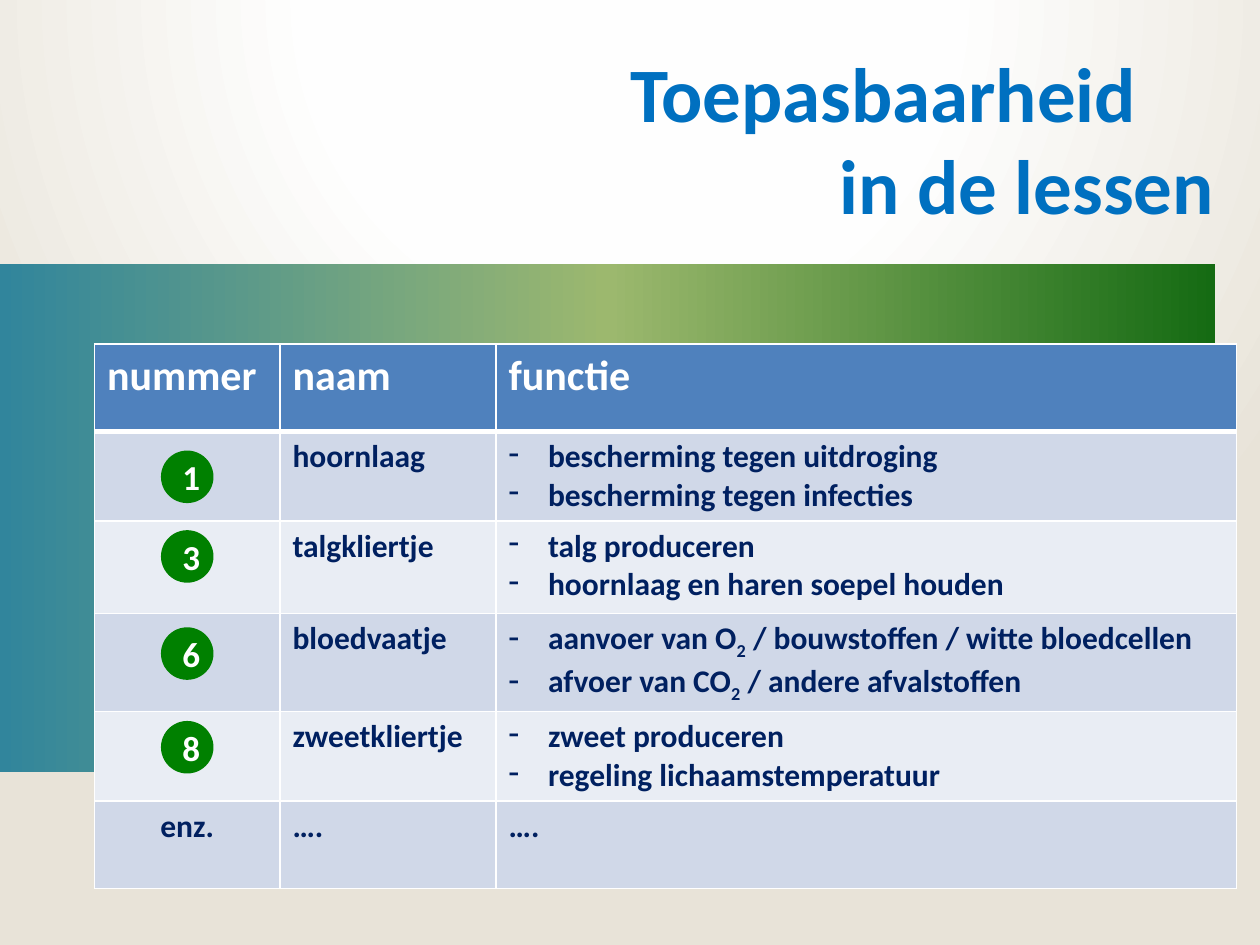
from lxml import etree
from pptx import Presentation
from pptx.dml.color import RGBColor
from pptx.enum import shapes, text
from pptx.oxml import parse_xml
from pptx.oxml.ns import nsdecls, qn
from pptx.util import Pt

WHITE = RGBColor(0xFF, 0xFF, 0xFF)
SKY = RGBColor(0x00, 0x70, 0xC0)
NAVY = RGBColor(0x00, 0x20, 0x60)
GREEN = RGBColor(0x00, 0x80, 0x00)
HEAD = RGBColor(0x4F, 0x81, 0xBD)
BANDS = [RGBColor(0xD0, 0xD8, 0xE8), RGBColor(0xE9, 0xED, 0xF4)]
BACK = [(0, WHITE), (40, RGBColor(0xFE, 0xFE, 0xFE)), (100, RGBColor(0xE8, 0xE3, 0xD8))]
SWEEP = [(0, RGBColor(0x31, 0x85, 0x9C)), (50, RGBColor(0x9C, 0xB8, 0x6E)),
         (100, RGBColor(0x15, 0x6B, 0x13))]
ROUND = ('<a:path path="circle"><a:fillToRect l="50000" t="-80000" '
         'r="50000" b="180000"/></a:path>')
LEVEL = '<a:lin ang="0" scaled="0"/>'

COLS = [106, 123.5, 423]
ROWS = [50, 50, 53, 50, 50, 50]
# "|" switches subscript on and off; a list is set with dashes
DATA = [
    ("nummer", "naam", "functie"),
    ("", "hoornlaag", ["bescherming tegen uitdroging", "bescherming tegen infecties"]),
    ("", "talgkliertje", ["talg produceren", "hoornlaag en haren soepel houden"]),
    ("", "bloedvaatje", ["aanvoer van O|2| / bouwstoffen / witte bloedcellen",
                         "afvoer van CO|2| / andere afvalstoffen"]),
    ("", "zweetkliertje", ["zweet produceren", "regeling lichaamstemperatuur"]),
    ("enz.", "….", "…."),
]
# Number and top of each badge, measured from the top of the table
BADGES = [("1", 62), ("3", 107.5), ("6", 163), ("8", 216.5)]


def blend(fill, stops, shade):
    """Give a fill the colour stops and the shading rule."""
    fill.gradient()
    grad = fill._fill._gradFill
    marks = "".join(f'<a:gs pos="{pos * 1000}"><a:srgbClr val="{tone}"/></a:gs>'
                    for pos, tone in stops)
    new = parse_xml(f'<a:gradFill {nsdecls("a")} rotWithShape="1">'
                    f'<a:gsLst>{marks}</a:gsLst>{shade}</a:gradFill>')
    grad.getparent().replace(grad, new)


def style(para, size, tone):
    font = para.font
    font.name, font.size, font.bold = "Calibri", Pt(size), True
    font.color.rgb = tone


def write(para, words, size, tone):
    for i, part in enumerate(words.split("|")):
        run = para.add_run()
        run.text = part
        if i % 2:
            run.font._element.set("baseline", "-25000")
    style(para, size, tone)


def dash(para):
    props = para._p.get_or_add_pPr()
    props.set("marL", str(Pt(22.5)))
    props.set("indent", str(-Pt(22.5)))
    mark = etree.Element(qn("a:buChar"), char="-")
    props.insert(0, mark)


def edge(cell, foot):
    """Draw white cell borders, with the given width at the foot."""
    props = cell._tc.get_or_add_tcPr()
    for i, (side, width) in enumerate([("L", 1), ("R", 1), ("T", 1), ("B", foot)]):
        props.insert(i, parse_xml(
            f'<a:ln{side} {nsdecls("a")} w="{Pt(width)}"><a:solidFill>'
            f'<a:srgbClr val="{WHITE}"/></a:solidFill></a:ln{side}>'))


def banner(slide, x, y, w, h):
    box = slide.shapes.add_shape(shapes.MSO_SHAPE.RECTANGLE, Pt(x), Pt(y), Pt(w), Pt(h))
    box.shadow.inherit = False
    blend(box.fill, SWEEP, LEVEL)
    box.line.fill.background()


def title(slide, x, y, w, h):
    frame = slide.shapes.add_textbox(Pt(x), Pt(y), Pt(w), Pt(h)).text_frame
    frame.word_wrap = True
    frame.margin_left = frame.margin_right = frame.margin_top = frame.margin_bottom = 0
    write(frame.paragraphs[0], "Toepasbaarheid", 44, SKY)
    last = frame.add_paragraph()
    write(last, "in de lessen", 44, SKY)
    last.alignment = text.PP_ALIGN.RIGHT


def badge(slide, x, y, size, label):
    dot = slide.shapes.add_shape(shapes.MSO_SHAPE.OVAL, Pt(x), Pt(y), Pt(size), Pt(size))
    dot.shadow.inherit = False
    dot.fill.solid()
    dot.fill.fore_color.rgb = dot.line.color.rgb = GREEN
    dot.line.width = Pt(2)
    dot.text_frame.vertical_anchor = text.MSO_ANCHOR.MIDDLE
    para = dot.text_frame.paragraphs[0]
    para.alignment = text.PP_ALIGN.CENTER
    write(para, label, 20, WHITE)


def grid(slide, x, y):
    """Place the table and the numbered badges of its first column."""
    table = slide.shapes.add_table(len(ROWS), len(COLS), Pt(x), Pt(y),
                                   Pt(sum(COLS)), Pt(sum(ROWS))).table
    for col, width in zip(table.columns, COLS):
        col.width = Pt(width)
    for r, (row, tall) in enumerate(zip(DATA, ROWS)):
        table.rows[r].height = Pt(tall)
        size, tone = (18, NAVY) if r else (24, WHITE)
        for c, words in enumerate(row):
            cell = table.cell(r, c)
            cell.fill.solid()
            cell.fill.fore_color.rgb = BANDS[(r - 1) % 2] if r else HEAD
            edge(cell, 1 if r else 3)
            listed = isinstance(words, list)
            for i, line in enumerate(words if listed else [words]):
                frame = cell.text_frame
                para = frame.add_paragraph() if i else frame.paragraphs[0]
                if line:
                    write(para, line, size, tone)
                if listed:
                    dash(para)
                if r and not c:
                    para.alignment = text.PP_ALIGN.CENTER
    for label, top in BADGES:
        badge(slide, x + 39, y + top, 28, label)


def main():
    deck = Presentation()
    deck.slide_width, deck.slide_height = Pt(720), Pt(540)
    slide = deck.slides.add_slide(deck.slide_layouts[6])
    blend(slide.background.fill, BACK, ROUND)
    banner(slide, 0, 151, 694.5, 290)
    grid(slide, 54, 196.5)
    title(slide, 360, 26, 334, 155)
    deck.save("out.pptx")


if __name__ == "__main__":
    main()
